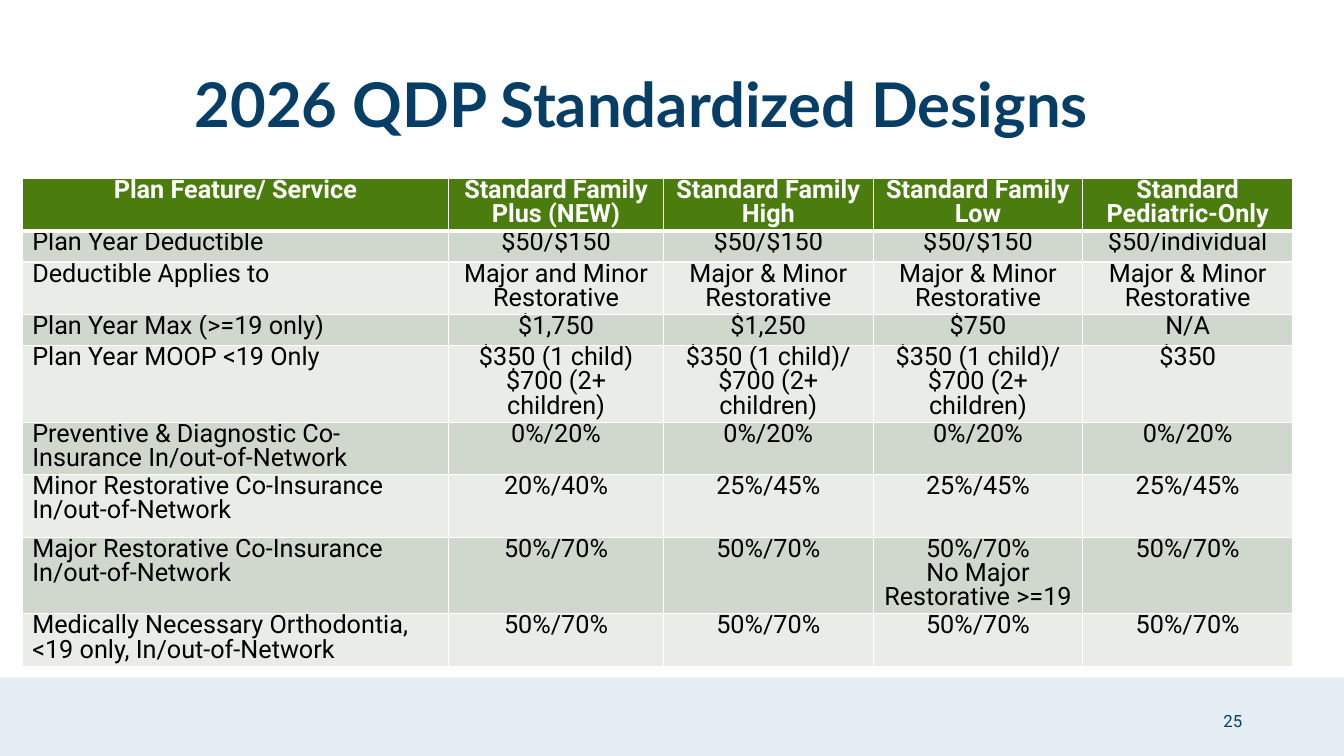
"""Build the slide comparing the 2026 standardized dental plan designs."""
from lxml.etree import SubElement
from pptx import Presentation
from pptx.dml.color import RGBColor
from pptx.enum.shapes import MSO_SHAPE as Shape
from pptx.enum.text import MSO_ANCHOR as Anchor, PP_ALIGN as Align
from pptx.oxml.ns import qn
from pptx.util import Inches, Pt

COLORS = {
    "navy": "063E66", "band": "006493", "header": "4B7C0E", "white": "FFFFFF",
    "black": "000000", "odd": "D0D7CC", "even": "E9ECE7",
}
HEADINGS = ["Plan Feature/ Service", "Standard Family Plus (NEW)", "Standard Family High",
            "Standard Family Low", "Standard Pediatric-Only"]
MAJOR_MINOR = "Major & Minor Restorative"
FAMILY_LIMIT = "$350 (1 child)/\v$700 (2+ children)"
FEATURES = [
    ["Plan Year Deductible"] + ["$50/$150"] * 3 + ["$50/individual"],
    ["Deductible Applies to", "Major and Minor Restorative"] + [MAJOR_MINOR] * 3,
    ["Plan Year Max (>=19 only)", "$1,750", "$1,250", "$750", "N/A"],
    ["Plan Year MOOP <19 Only", "$350 (1 child)\n$700 (2+ children)",
     FAMILY_LIMIT, FAMILY_LIMIT, "$350"],
    ["Preventive & Diagnostic Co-Insurance In/out-of-Network"] + ["0%/20%"] * 4,
    ["Minor Restorative Co-Insurance\nIn/out-of-Network", "20%/40%"] + ["25%/45%"] * 3,
    ["Major Restorative Co-Insurance\nIn/out-of-Network", "50%/70%", "50%/70%",
     "50%/70%\nNo Major Restorative >=19", "50%/70%"],
    ["Medically Necessary Orthodontia, <19 only, In/out-of-Network"] + ["50%/70%"] * 4,
]
COLUMN_WIDTHS = [4.23, 2.13, 2.08, 2.08, 2.08]
ROW_UNIT = 0.31
ROW_UNITS = [1, 1, 1, 1, 2, 1, 2, 2, 1]

deck = Presentation()
deck.slide_width, deck.slide_height = Inches(13.33), Inches(7.5)
page = deck.slides.add_slide(deck.slide_layouts[5])


def area(left, top, width, height):
    """Turn percentages of the slide into lengths."""
    sizes = (deck.slide_width, deck.slide_height) * 2
    return [int(size * share / 100) for size, share in zip(sizes, (left, top, width, height))]


def style(para, font_name, size, color, bold=False):
    """Format every run of a paragraph."""
    for span in para.runs:
        span.font.name, span.font.size, span.font.bold = font_name, Pt(size), bold
        span.font.color.rgb = RGBColor.from_string(COLORS[color])


band = page.shapes.add_shape(Shape.RECTANGLE, *area(0, 89.6, 100, 10.4))
band.shadow.inherit = False
band.line.fill.background()
band.fill.solid()
band.fill.fore_color.rgb = RGBColor.from_string(COLORS["band"])
tint = band.fill._xPr.find(qn("a:solidFill"))[0]
SubElement(tint, qn("a:alpha"), val="10000")

title = page.shapes.title
title.left, title.top, title.width, title.height = area(13.73, 9.07, 86.27, 10.27)
title.text_frame.text = "2026 QDP Standardized Designs"
title.text_frame.vertical_anchor = Anchor.MIDDLE
heading = title.text_frame.paragraphs[0]
heading.alignment, heading.line_spacing = Align.LEFT, 0.9
style(heading, "Lato", 44, "navy", True)

rows = [HEADINGS] + FEATURES
frame = page.shapes.add_table(len(rows), len(HEADINGS), *area(1.65, 23.6, 94.6, 64))
table = frame.table
for column, width in zip(table.columns, COLUMN_WIDTHS):
    column.width = Inches(width)
for row, units in zip(table.rows, ROW_UNITS):
    row.height = Inches(ROW_UNIT * units)
frame.height = Inches(4.8)

for r, texts in enumerate(rows):
    is_header = r == 0
    fill = "header" if is_header else ("even", "odd")[r % 2]
    for c, text in enumerate(texts):
        cell = table.cell(r, c)
        cell.text_frame.text = text
        cell.margin_left = cell.margin_right = Inches(0.1)
        cell.margin_top = cell.margin_bottom = Inches(0.02)
        for para in cell.text_frame.paragraphs:
            para.alignment = Align.CENTER if is_header or c else Align.LEFT
            para.line_spacing = Pt(17.3)
            style(para, "Roboto", 18, "white" if is_header else "black", is_header)
        borders = cell._tc.get_or_add_tcPr()
        for side in "LRTB":
            thick = (is_header and side == "B") or (r == 1 and side == "T")
            line = SubElement(borders, qn(f"a:ln{side}"), w=str(Pt(3 if thick else 1)))
            SubElement(SubElement(line, qn("a:solidFill")), qn("a:srgbClr"), val=COLORS["white"])
        cell.fill.solid()
        cell.fill.fore_color.rgb = RGBColor.from_string(COLORS[fill])

number = page.shapes.add_textbox(*area(70.67, 92.67, 22.5, 5.33))
number.text_frame.word_wrap = True
number.text_frame.vertical_anchor = Anchor.MIDDLE
number.text_frame.text = "25"
number.text_frame.paragraphs[0].alignment = Align.RIGHT
style(number.text_frame.paragraphs[0], "Roboto", 12, "navy")

deck.save("out.pptx")
